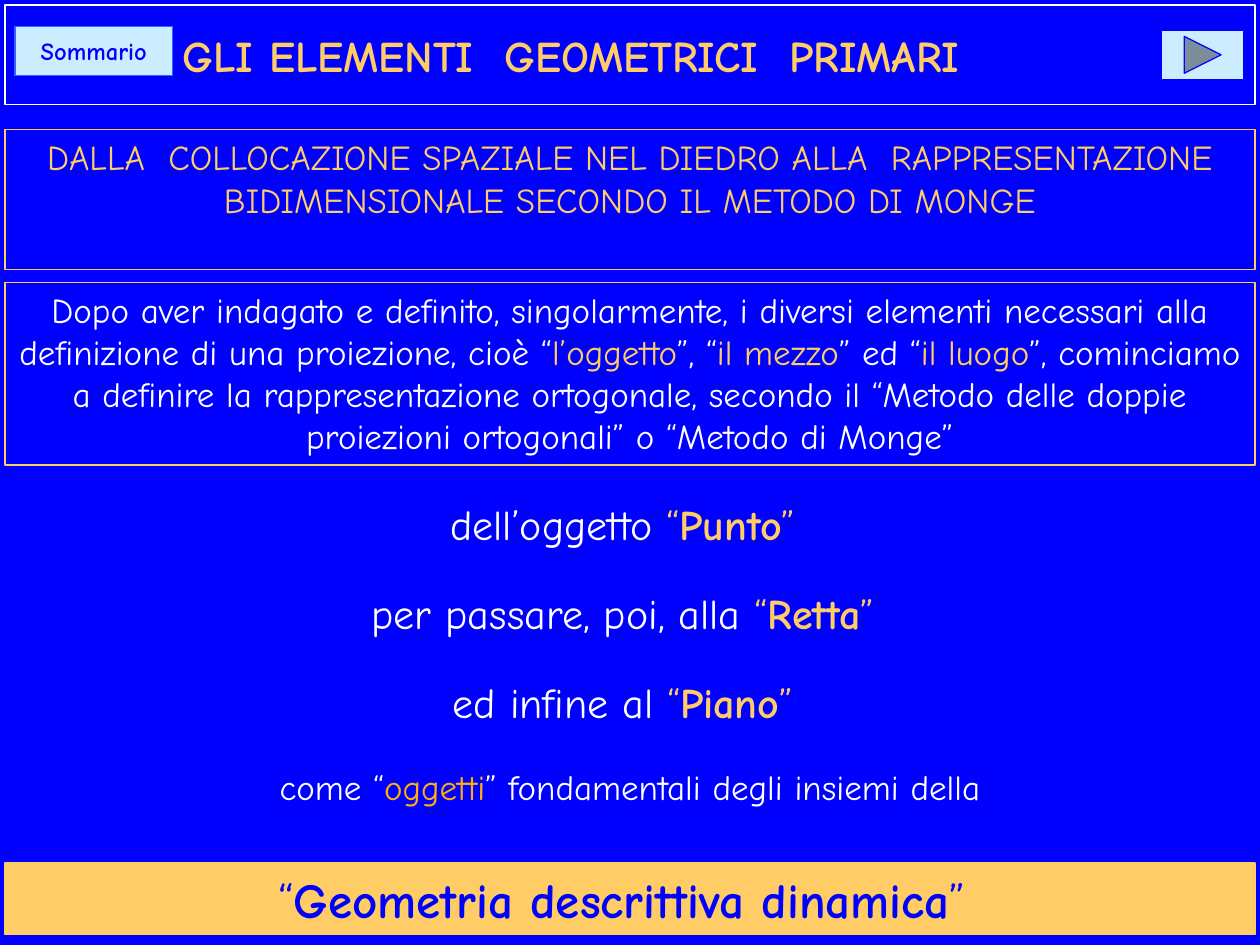
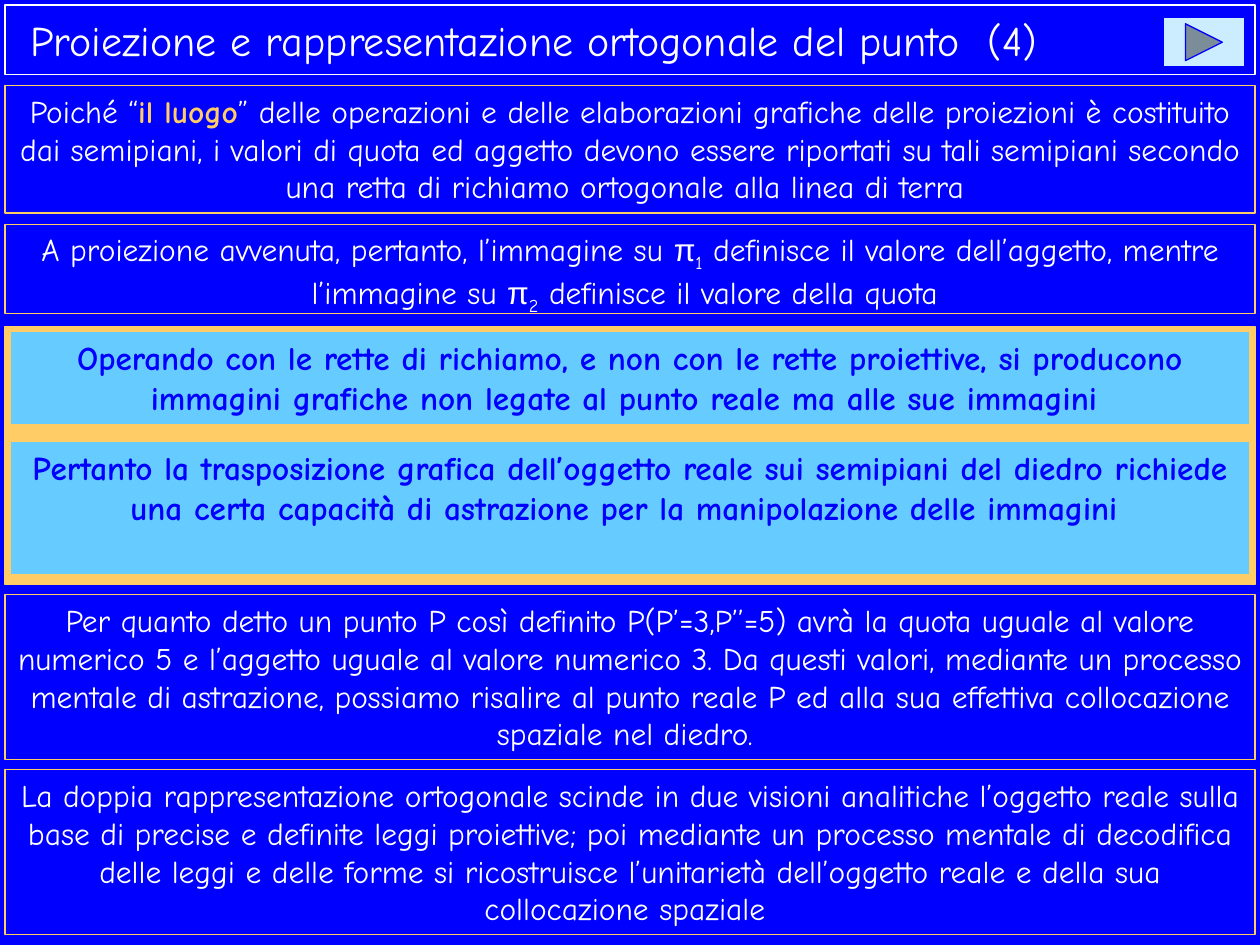
from pptx import Presentation
from pptx.dml.color import RGBColor
from pptx.enum.shapes import MSO_SHAPE
from pptx.enum.text import MSO_ANCHOR, PP_ALIGN
from pptx.util import Inches, Pt

COLORS = {
    "blue": "0000FF", "white": "FFFFFF", "gold": "FFCC66", "amber": "FFAE0D",
    "sky": "66CCFF", "ice": "CCECFF", "edge": "3366FF",
}
FONT = "Comic Neue"
LEFT, WIDTH = 0.04, 9.92
INSET_LEFT, INSET_WIDTH = 0.08, 9.84

# Run formats that differ from the format of their text
GOLD = {"color": "gold"}
GOLD_BOLD = {"color": "gold", "bold": True}
BOLD = {"bold": True}
GREEK = {"name": "Arial"}
SUBSCRIPT = {"baseline": -25000}


def rgb(name):
    return RGBColor.from_string(COLORS[name])


def add_slide(prs):
    s = prs.slides.add_slide(prs.slide_layouts[6])
    s.background.fill.solid()
    s.background.fill.fore_color.rgb = rgb("blue")
    return s


def write(tf, runs, size, color="white", align=PP_ALIGN.CENTER,
          anchor=MSO_ANCHOR.TOP, margin_left=0.1, bold=False):
    """Fill a text frame; runs is a string or a list of strings and (text, format)."""
    frame = {"word_wrap": True, "vertical_anchor": anchor,
             "margin_left": Inches(margin_left)}
    for key, value in frame.items():
        setattr(tf, key, value)
    p = tf.paragraphs[0]
    p.alignment = align
    for run in [runs] if isinstance(runs, str) else runs:
        text, extra = (run, {}) if isinstance(run, str) else run
        style = {"name": FONT, "size": Pt(size), "bold": bold, "color": color, **extra}
        r = p.add_run()
        r.text = text
        r.font.color.rgb = rgb(style.pop("color"))
        baseline = style.pop("baseline", None)
        if baseline:
            r._r.get_or_add_rPr().set("baseline", str(baseline))
        for key, value in style.items():
            setattr(r.font, key, value)


def add_shape(s, kind, box, fill=None, line="gold", line_width=0.75):
    sp = s.shapes.add_shape(kind, *map(Inches, box))
    sp.shadow.inherit = False
    if fill:
        sp.fill.solid()
        sp.fill.fore_color.rgb = rgb(fill)
    else:
        sp.fill.background()
    sp.line.color.rgb = rgb(line)
    sp.line.width = Pt(line_width)
    return sp


def add_panel(s, top, height, runs, size, fill=None, left=LEFT, width=WIDTH, **style):
    sp = add_shape(s, MSO_SHAPE.RECTANGLE, (left, top, width, height), fill)
    write(sp.text_frame, runs, size, **style)


def add_title(s, text, height, size, indent, **style):
    sp = add_shape(s, MSO_SHAPE.RECTANGLE, (LEFT, 0.04, WIDTH, height), line="white")
    write(sp.text_frame, text, size, align=PP_ALIGN.LEFT, anchor=MSO_ANCHOR.MIDDLE,
          margin_left=indent, **style)


def add_text_line(s, top, height, runs, size):
    sp = s.shapes.add_textbox(*map(Inches, (LEFT, top, WIDTH, height)))
    write(sp.text_frame, runs, size)


def add_next_button(s, left, top):
    add_shape(s, MSO_SHAPE.ACTION_BUTTON_FORWARD_OR_NEXT, (left, top, 0.65, 0.39),
              "ice", "blue", 0)


def add_summary_button(s):
    sp = add_shape(s, MSO_SHAPE.ACTION_BUTTON_CUSTOM, (0.12, 0.21, 1.25, 0.39),
                   "ice", "edge", 0)
    write(sp.text_frame, "Sommario", 14, color="blue", bold=True,
          anchor=MSO_ANCHOR.MIDDLE)


def build_elements_slide(prs):
    s = add_slide(prs)
    add_title(s, "GLI ELEMENTI  GEOMETRICI  PRIMARI", 0.79, 25, 1.41,
              color="gold", bold=True)

    # Framed introduction
    add_panel(s, 1.03, 1.11,
              "DALLA  COLLOCAZIONE SPAZIALE NEL DIEDRO ALLA  RAPPRESENTAZIONE "
              "BIDIMENSIONALE SECONDO IL METODO DI MONGE", 20, color="gold")
    add_panel(s, 2.24, 1.45, [
        "Dopo aver indagato e definito, singolarmente, i diversi elementi necessari "
        "alla definizione di una proiezione, cioè “", ("l’oggetto", GOLD), "”, “",
        ("il mezzo", GOLD), "” ed “", ("il luogo", GOLD),
        "”, cominciamo a definire la rappresentazione ortogonale, secondo il “Metodo "
        "delle doppie proiezioni ortogonali” o “Metodo di Monge”"], 20)

    # The three primary elements
    elements = [("dell’oggetto ", "Punto"), ("per passare, poi, alla ", "Retta"),
                ("ed infine al ", "Piano")]
    for i, (lead, element) in enumerate(elements):
        add_text_line(s, 3.91 + 0.705 * i, 0.5,
                      [lead, ("“", GOLD), (element, GOLD_BOLD), ("” ", GOLD)], 24)

    # Closing line and band
    add_text_line(s, 6.03, 0.43, ["come “", ("oggetti", {"color": "amber"}),
                                  "” fondamentali degli insiemi della"], 20)
    add_panel(s, 6.85, 0.57, ["“", ("Geometria descrittiva dinamica", BOLD), "” "],
              28, fill="gold", color="blue")

    add_summary_button(s)
    add_next_button(s, 9.22, 0.24)


def build_point_slide(prs):
    s = add_slide(prs)
    add_title(s, "Proiezione e rappresentazione ortogonale del punto  (4)",
              0.55, 24, 0.2)

    # Framed paragraphs
    panels = [
        (0.68, 1.01, [
            "Poiché “", ("il luogo", GOLD_BOLD),
            "” delle operazioni e delle elaborazioni grafiche delle proiezioni è "
            "costituito dai semipiani, i valori di quota ed aggetto devono essere "
            "riportati su tali semipiani secondo una retta di richiamo ortogonale "
            "alla linea di terra "]),
        (1.78, 0.71, [
            "A proiezione avvenuta, pertanto, l’immagine su ", ("π", GREEK),
            ("1", SUBSCRIPT),
            " definisce il valore dell’aggetto, mentre l’immagine su ", ("π", GREEK),
            ("2", SUBSCRIPT), " definisce il valore della quota "]),
        (4.72, 1.31,
            "Per quanto detto un punto P così definito P(P’=3,P’’=5) avrà la quota "
            "uguale al valore numerico 5 e l’aggetto uguale al valore numerico 3. Da "
            "questi valori, mediante un processo mentale di astrazione, possiamo "
            "risalire al punto reale P ed alla sua effettiva collocazione spaziale "
            "nel diedro. "),
        (6.11, 1.31,
            "La doppia rappresentazione ortogonale scinde in due visioni analitiche "
            "l’oggetto reale sulla base di precise e definite leggi proiettive; poi "
            "mediante un processo mentale di decodifica delle leggi e delle forme si "
            "ricostruisce l’unitarietà dell’oggetto reale e della sua collocazione "
            "spaziale "),
    ]
    for top, height, runs in panels:
        add_panel(s, top, height, runs, 18)

    # Highlighted conclusions on a gold backing
    add_shape(s, MSO_SHAPE.RECTANGLE, (LEFT, 2.59, WIDTH, 2.05), "gold")
    conclusions = [
        (2.63, 0.74,
            "Operando con le rette di richiamo, e non con le rette proiettive, si "
            "producono immagini grafiche non legate al punto reale ma alle sue "
            "immagini "),
        (3.5, 1.06,
            "Pertanto la trasposizione grafica dell’oggetto reale sui semipiani del "
            "diedro richiede una certa capacità di astrazione per la manipolazione "
            "delle immagini "),
    ]
    for top, height, text in conclusions:
        add_panel(s, top, height, text, 19, fill="sky", left=INSET_LEFT,
                  width=INSET_WIDTH, color="blue", bold=True)

    add_next_button(s, 9.23, 0.14)


def main():
    prs = Presentation()
    prs.slide_width, prs.slide_height = Inches(10), Inches(7.5)
    build_elements_slide(prs)
    build_point_slide(prs)
    prs.save("out.pptx")


if __name__ == "__main__":
    main()
